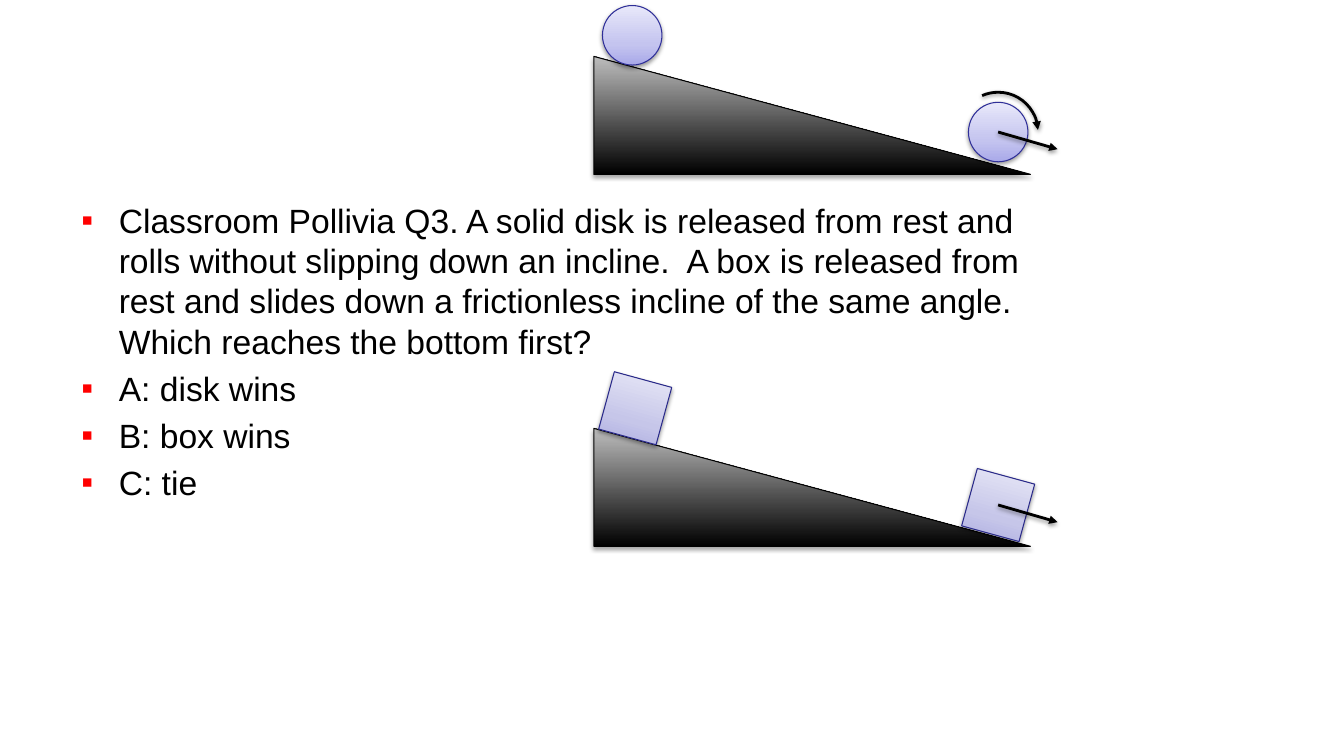
import lxml.etree
import pptx
import pptx.dml.color
import pptx.enum.shapes
import pptx.oxml
import pptx.oxml.ns
import pptx.util

QUESTION = [
    "Classroom Pollivia Q3. A solid disk is released from rest and rolls without "
    "slipping down an incline.  A box is released from rest and slides down a "
    "frictionless incline of the same angle. Which reaches the bottom first?",
    "A: disk wins",
    "B: box wins",
    "C: tie",
]

PRESET = pptx.enum.shapes.MSO_SHAPE

# Body centres are measured from the top left corner of the incline.
RACES = [
    {"incline_top": 4.25, "body": PRESET.RECTANGLE, "look": "box", "tilt": 15.3,
     "start": (0.41, -0.2), "finish": (4.01, 0.76), "rolls": False},
    {"incline_top": 0.56, "body": PRESET.OVAL, "look": "disk", "tilt": 0,
     "start": (0.38, -0.21), "finish": (4.01, 0.75), "rolls": True},
]

THEME = {
    "font": "Arial", "text_size": 24, "text": "000000", "bullet": "FF0000",
    "arrow": "000000", "arrow_width": 2, "outline_width": 0.75,
    "incline": {"line": "000000", "stops": [(0, "000000"), (100, "BDBDBD")],
                "shadow": (35, 1.8)},
    "box": {"line": "2A2A89", "stops": [(0, "ADADE1"), (35, "C6C6E9"), (100, "E9E9F7")],
            "shadow": (38, 1.6)},
    "disk": {"line": "2F2F98", "stops": [(0, "A9A9E9"), (35, "C4C4EF"), (100, "E8E8FA")],
             "shadow": (38, 1.6)},
    "arrow_shadow": (38, 1.6), "shadow_blur": 3.1,
}

SLIDE_W, SLIDE_H = 13.33, 7.5
INCLINE_LEFT, INCLINE_W, INCLINE_H = 5.89, 4.33, 1.17
BODY = 0.59
SPIN = 0.79
SPIN_ANGLES = (246.24, 356.9)
VELOCITY = (0.59, 0.17)
QUESTION_BOX = (0.71, 1.93, 9.75, 4.97)
INDENT = 0.37

inch = pptx.util.Inches
rgb = pptx.dml.color.RGBColor.from_string
NS = pptx.oxml.ns.nsdecls("a")


def add_shadow(part, opacity, distance):
    blur = pptx.util.Pt(THEME["shadow_blur"])
    part._element.spPr.append(pptx.oxml.parse_xml(
        f'<a:effectLst {NS}><a:outerShdw blurRad="{blur}" '
        f'dist="{pptx.util.Pt(distance)}" dir="5400000" rotWithShape="0">'
        f'<a:srgbClr val="000000"><a:alpha val="{opacity * 1000}"/></a:srgbClr>'
        f'</a:outerShdw></a:effectLst>'))


def add_solid(shapes, preset, left, top, width, height, look):
    """Add an outlined shape with an upward gradient and a soft shadow."""
    solid = shapes.add_shape(preset, inch(left), inch(top), inch(width), inch(height))
    stops = "".join(f'<a:gs pos="{share * 1000}"><a:srgbClr val="{colour}"/></a:gs>'
                    for share, colour in look["stops"])
    solid._element.spPr.insert(2, pptx.oxml.parse_xml(
        f'<a:gradFill {NS} rotWithShape="1"><a:gsLst>{stops}</a:gsLst>'
        f'<a:lin ang="16200000" scaled="0"/></a:gradFill>'))
    solid.line.color.rgb = rgb(look["line"])
    solid.line.width = pptx.util.Pt(THEME["outline_width"])
    add_shadow(solid, *look["shadow"])
    return solid


def style_arrow(arrow):
    arrow.line.color.rgb = rgb(THEME["arrow"])
    arrow.line.width = pptx.util.Pt(THEME["arrow_width"])
    outline = arrow._element.spPr.find(pptx.oxml.ns.qn("a:ln"))
    lxml.etree.SubElement(outline, pptx.oxml.ns.qn("a:tailEnd"), type="triangle")
    add_shadow(arrow, *THEME["arrow_shadow"])


def add_race(shapes, race):
    top = race["incline_top"]
    add_solid(shapes, PRESET.RIGHT_TRIANGLE, INCLINE_LEFT, top,
              INCLINE_W, INCLINE_H, THEME["incline"])
    for stage in ("start", "finish"):
        x, y = INCLINE_LEFT + race[stage][0], top + race[stage][1]
        body = add_solid(shapes, race["body"], x - BODY / 2, y - BODY / 2,
                         BODY, BODY, THEME[race["look"]])
        body.rotation = race["tilt"]
    if race["rolls"]:
        spin = shapes.add_shape(PRESET.ARC, inch(x - SPIN / 2), inch(y - SPIN / 2),
                                inch(SPIN), inch(SPIN))
        for i, angle in enumerate(SPIN_ANGLES):
            spin.adjustments[i] = angle * 0.6  # 60000 units a degree, scaled by 100000
        spin.fill.background()
        style_arrow(spin)
    velocity = shapes.add_connector(
        pptx.enum.shapes.MSO_CONNECTOR.STRAIGHT, inch(x), inch(y),
        inch(x + VELOCITY[0]), inch(y + VELOCITY[1]))
    style_arrow(velocity)


def add_question(shapes):
    frame = shapes.add_textbox(*map(inch, QUESTION_BOX)).text_frame
    frame.word_wrap = True
    for i, line in enumerate(QUESTION):
        paragraph = frame.add_paragraph() if i else frame.paragraphs[0]
        paragraph.space_before = pptx.util.Pt(THEME["text_size"] * 0.2)
        properties = paragraph._p.get_or_add_pPr()
        properties.set("marL", str(inch(INDENT)))
        properties.set("indent", str(-inch(INDENT)))
        for bullet in (f'<a:buClr {NS}><a:srgbClr val="{THEME["bullet"]}"/></a:buClr>',
                       f'<a:buFont {NS} typeface="{THEME["font"]}"/>',
                       f'<a:buChar {NS} char="▪"/>'):
            properties.append(pptx.oxml.parse_xml(bullet))
        run = paragraph.add_run()
        run.text = line
        run.font.name = THEME["font"]
        run.font.size = pptx.util.Pt(THEME["text_size"])
        run.font.color.rgb = rgb(THEME["text"])


def main():
    deck = pptx.Presentation()
    deck.slide_width, deck.slide_height = inch(SLIDE_W), inch(SLIDE_H)
    slide = deck.slides.add_slide(deck.slide_layouts[6])
    for race in RACES:
        add_race(slide.shapes, race)
    add_question(slide.shapes)
    deck.save("out.pptx")


if __name__ == "__main__":
    main()
